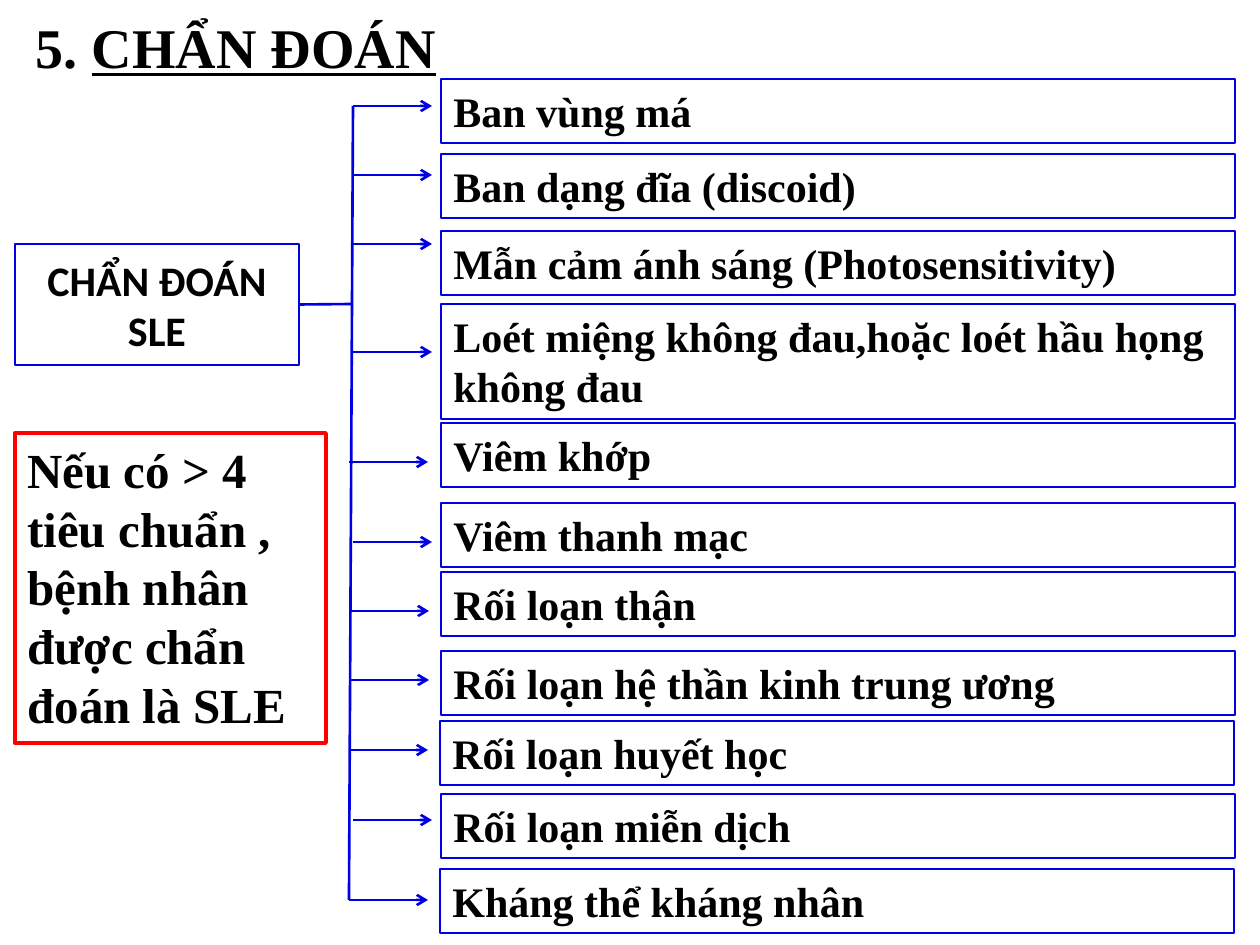
from lxml import etree
from pptx import Presentation
from pptx.dml.color import RGBColor
from pptx.enum.shapes import MSO_CONNECTOR, MSO_SHAPE
from pptx.enum.text import MSO_ANCHOR, MSO_AUTO_SIZE, PP_ALIGN
from pptx.oxml.ns import qn
from pptx.util import Inches, Pt

SCALE = Inches(1) / 126
BLUE, RED, BLACK = "0000E2", "FF0000", "000000"
SERIF, SANS = "Times New Roman", "Calibri"


def px(length):
    return round(length * SCALE)


def color(code):
    return RGBColor.from_string(code)


class Board:
    def __init__(self, slide):
        self.slide = slide

    def style(self, paragraph, size, font, align):
        paragraph.alignment = align
        for run in paragraph.runs:
            run.font.size = Pt(size)
            run.font.name = font
            run.font.bold = True
            run.font.color.rgb = color(BLACK)

    def heading(self, number, words, left, top, width, height):
        title = self.slide.shapes.add_textbox(px(left), px(top), px(width), px(height))
        frame = title.text_frame
        frame.word_wrap = False
        frame.auto_size = MSO_AUTO_SIZE.SHAPE_TO_FIT_TEXT
        paragraph = frame.paragraphs[0]
        paragraph.add_run().text = number
        underlined = paragraph.add_run()
        underlined.text = words
        underlined.font.underline = True
        self.style(paragraph, 32, SERIF, PP_ALIGN.CENTER)

    def box(self, text, left, top, width, height, size=24, font=SERIF, line=BLUE,
            weight=1, align=PP_ALIGN.LEFT, anchor=MSO_ANCHOR.TOP):
        panel = self.slide.shapes.add_shape(
            MSO_SHAPE.RECTANGLE, px(left), px(top), px(width), px(height))
        panel.shadow.inherit = False
        panel.fill.background()
        panel.line.color.rgb = color(line)
        panel.line.width = Pt(weight)
        frame = panel.text_frame
        frame.word_wrap = True
        frame.vertical_anchor = anchor
        frame.text = text
        for paragraph in frame.paragraphs:
            self.style(paragraph, size, font, align)
        return panel

    def line(self, x1, y1, x2, y2, arrow=False):
        link = self.slide.shapes.add_connector(
            MSO_CONNECTOR.STRAIGHT, px(x1), px(y1), px(x2), px(y2))
        link.line.color.rgb = color(BLUE)
        link.line.width = Pt(1.5)
        if arrow:
            etree.SubElement(link.line._get_or_add_ln(), qn("a:tailEnd"), type="arrow")
        etree.SubElement(link._element.spPr, qn("a:effectLst"))
        return link


def main():
    deck = Presentation()
    deck.slide_width, deck.slide_height = px(1260), px(945)
    board = Board(deck.slides.add_slide(deck.slide_layouts[6]))

    board.heading("5. ", "CHẨN ĐOÁN", 21, 6, 430, 81)
    diagnosis = board.box("CHẨN ĐOÁN\nSLE", 15, 244, 284, 121, font=SANS, weight=1.5,
                          align=PP_ALIGN.CENTER, anchor=MSO_ANCHOR.MIDDLE)
    stem = board.line(299, 305, 353, 304)
    stem.begin_connect(diagnosis, 3)
    board.line(349, 900, 353, 106)

    criteria = [
        ("Ban vùng má", 441, 79, 353, 106),
        ("Ban dạng đĩa (discoid)", 441, 154, 353, 175),
        ("Mẫn cảm ánh sáng (Photosensitivity)", 441, 231, 353, 244),
        ("Loét miệng không đau,hoặc loét hầu họng không đau", 441, 304, 353, 352),
        ("Viêm khớp", 441, 423, 349, 462),
        ("Viêm thanh mạc", 441, 503, 353, 542),
        ("Rối loạn thận", 441, 572, 350, 611),
        ("Rối loạn hệ thần kinh trung ương", 441, 651, 350, 680),
        ("Rối loạn huyết học", 440, 721, 349, 750),
        ("Rối loạn miễn dịch", 441, 794, 353, 820),
        ("Kháng thể kháng nhân", 440, 869, 349, 900),
    ]
    two_line = "Loét"
    for criterion, left, top, branch_x, branch_y in criteria:
        board.line(branch_x, branch_y, branch_x + 79, branch_y, arrow=True)
        height = 115 if criterion.startswith(two_line) else 64
        board.box(criterion, left, top, 794, height)

    board.box("Nếu có > 4 tiêu chuẩn , bệnh nhân được chẩn đoán là SLE",
              15, 433, 311, 310, size=28, line=RED, weight=2.25)
    deck.save("out.pptx")


if __name__ == "__main__":
    main()
